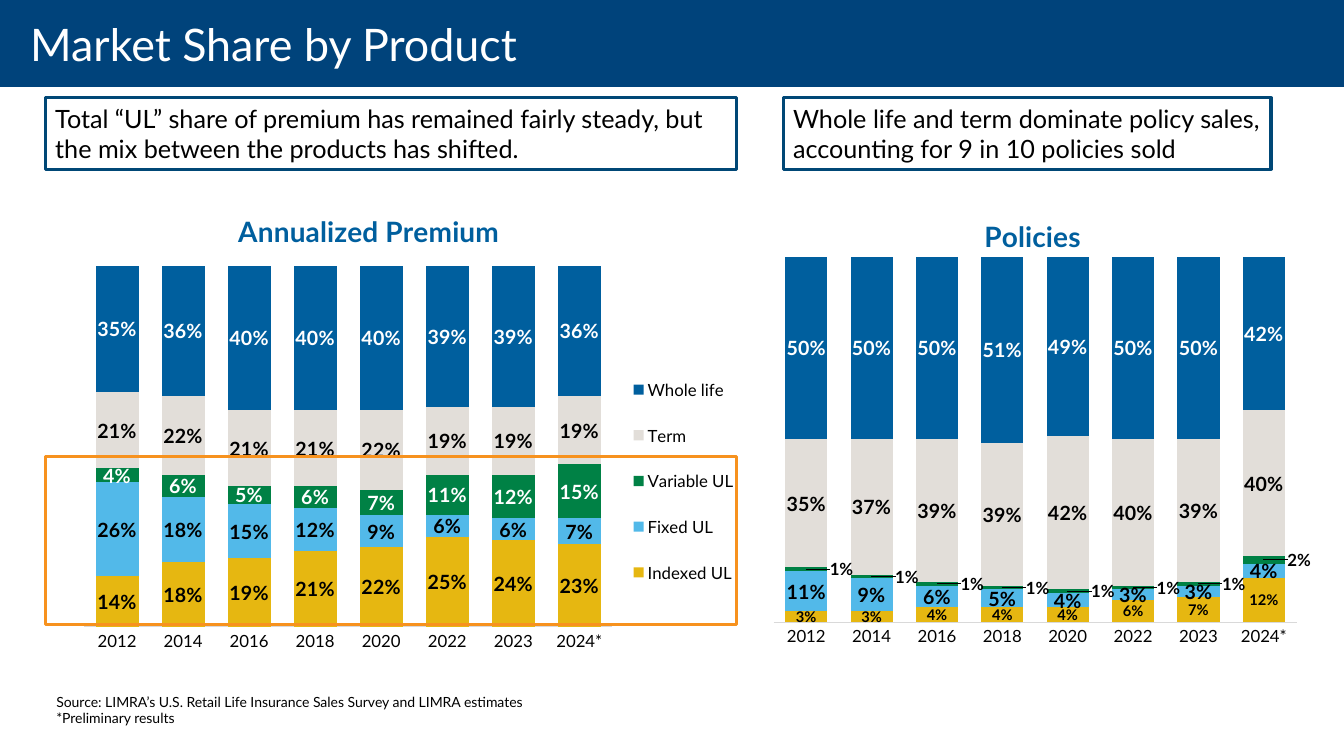
from dataclasses import dataclass
from typing import Optional

from lxml import etree
from pptx import Presentation
from pptx.chart.data import CategoryChartData
from pptx.dml.color import RGBColor
from pptx.enum.chart import XL_CHART_TYPE, XL_LABEL_POSITION, XL_LEGEND_POSITION, XL_TICK_MARK
from pptx.enum.shapes import MSO_SHAPE
from pptx.enum.text import MSO_ANCHOR, PP_ALIGN
from pptx.oxml.ns import qn
from pptx.util import Pt

STACKED = XL_CHART_TYPE.COLUMN_STACKED_100
CENTER = XL_LABEL_POSITION.CENTER
RIGHT = XL_LEGEND_POSITION.RIGHT
NO_TICK = XL_TICK_MARK.NONE
RECT = MSO_SHAPE.RECTANGLE
MIDDLE, BOTTOM = MSO_ANCHOR.MIDDLE, MSO_ANCHOR.BOTTOM
LEFT = PP_ALIGN.LEFT

BLACK = RGBColor(0x00, 0x00, 0x00)
WHITE = RGBColor(0xFF, 0xFF, 0xFF)
NAVY = RGBColor(0x00, 0x43, 0x7B)
FRAME = RGBColor(0x00, 0x47, 0x76)
BLUE = RGBColor(0x00, 0x5F, 0x9E)
ORANGE = RGBColor(0xF7, 0x92, 0x1E)
GOLD = RGBColor(0xE6, 0xB7, 0x11)
SKY = RGBColor(0x52, 0xB9, 0xE9)
GREEN = RGBColor(0x00, 0x81, 0x45)
STONE = RGBColor(0xE2, 0xDE, 0xD9)
GRAY = RGBColor(0xD9, 0xD9, 0xD9)

FONT = "Lato"
YEARS = ["2012", "2014", "2016", "2018", "2020", "2022", "2023", "2024*"]


@dataclass
class Box:
    x: float
    y: float
    w: float
    h: float

    def emu(self) -> tuple:
        return Pt(self.x), Pt(self.y), Pt(self.w), Pt(self.h)


@dataclass
class Product:
    name: str
    color: RGBColor
    percents: list
    label_color: RGBColor = BLACK
    label_size: float = 14
    label_shift: float = 0


@dataclass
class ShareChart:
    title: str
    box: Box
    plot: Box
    title_x: float
    title_y: float
    gap: int
    products: list
    legend: Optional[Box] = None


@dataclass
class Frame:
    box: Box
    color: RGBColor
    text: str = ""


CHARTS = [
    ShareChart("Annualized Premium", Box(50.4, 140.4, 483.84, 330.48),
               Box(0.02, 0.15, 0.78, 0.78), 0.24, 0.02, 53, [
        Product("Indexed UL", GOLD, [14, 18, 19, 21, 22, 25, 24, 23]),
        Product("Fixed UL", SKY, [26, 18, 15, 12, 9, 6, 6, 7]),
        Product("Variable UL", GREEN, [4, 6, 5, 6, 7, 11, 12, 15], WHITE),
        Product("Term", STONE, [21, 22, 21, 21, 22, 19, 19, 19]),
        Product("Whole life", BLUE, [35, 36, 40, 40, 40, 39, 39, 36], WHITE),
    ], Box(0.82, 0.34, 0.17, 0.55)),
    ShareChart("Policies", Box(540, 140.4, 419.76, 330.48),
               Box(0.03, 0.13, 0.89, 0.79), 0.38, 0.03, 55, [
        Product("Indexed UL", GOLD, [3, 3, 4, 4, 4, 6, 7, 12], label_size=10.5),
        Product("Fixed UL", SKY, [11, 9, 6, 5, 4, 3, 3, 4]),
        Product("Variable UL", GREEN, [1, 1, 1, 1, 1, 1, 1, 2], label_size=12, label_shift=0.06),
        Product("Term", STONE, [35, 37, 39, 39, 42, 40, 39, 40]),
        Product("Whole life", BLUE, [50, 50, 50, 51, 49, 50, 50, 42], WHITE),
    ]),
]

FRAMES = [
    Frame(Box(32.4, 326.2, 493.9, 120.2), ORANGE),
    Frame(Box(32.4, 69.8, 493.9, 51.1), FRAME,
          "Total “UL” share of premium has remained fairly steady, "
          "but the mix between the products has shifted."),
    Frame(Box(559.4, 69.8, 348.5, 51.1), FRAME,
          "Whole life and term dominate policy sales, accounting for 9 in 10 policies sold"),
]

SOURCE = ["Source: LIMRA’s U.S. Retail Life Insurance Sales Survey and LIMRA estimates",
          "*Preliminary results"]


def style_font(font, size: float, color: RGBColor, bold: bool = False) -> None:
    font.name = FONT
    font.size = Pt(size)
    font.bold = bold
    font.color.rgb = color


def write(tf, lines: list, size: float, color: RGBColor) -> None:
    for i, line in enumerate(lines):
        p = tf.add_paragraph() if i else tf.paragraphs[0]
        p.alignment = LEFT
        r = p.add_run()
        r.text = line
        style_font(r.font, size, color)


def manual_layout(**values) -> etree.Element:
    layout = etree.Element(qn("c:layout"))
    manual = etree.SubElement(layout, qn("c:manualLayout"))
    for tag, value in values.items():
        etree.SubElement(manual, qn(f"c:{tag}")).set("val", str(value))
    return layout


def place(parent, layout, after: str) -> None:
    for old in parent.findall(qn("c:layout")):
        parent.remove(old)
    previous = parent.find(qn(after))
    if previous is None:
        parent.insert(0, layout)
    else:
        previous.addnext(layout)


def style_series(series, product: Product) -> None:
    series.format.fill.solid()
    series.format.fill.fore_color.rgb = product.color
    labels = series.data_labels
    labels.show_value = True
    labels.number_format = "0%"
    labels.number_format_is_linked = False
    labels.position = CENTER
    style_font(labels.font, product.label_size, product.label_color, True)
    if product.label_shift:
        for i in range(len(YEARS)):
            label = series.points[i].data_label
            style_font(label.font, product.label_size, product.label_color, True)
            label.position = CENTER
        for dlbl in labels._element.findall(qn("c:dLbl")):
            place(dlbl, manual_layout(x=product.label_shift, y=0), "c:idx")


def add_share_chart(slide, spec: ShareChart) -> None:
    data = CategoryChartData(number_format="0%")
    data.categories = YEARS
    for product in spec.products:
        data.add_series(product.name, [v / 100 for v in product.percents])
    chart = slide.shapes.add_chart(STACKED, *spec.box.emu(), data).chart
    style_font(chart.font, 12, BLACK)

    chart.has_title = True
    r = chart.chart_title.text_frame.paragraphs[0].add_run()
    r.text = spec.title
    style_font(r.font, 20, BLUE, True)
    place(chart.chart_title._element,
          manual_layout(xMode="edge", yMode="edge", x=spec.title_x, y=spec.title_y), "c:tx")

    plot = chart.plots[0]
    plot.gap_width = spec.gap
    plot.overlap = 100
    plot.vary_by_categories = False
    for series, product in zip(plot.series, spec.products):
        style_series(series, product)
    area = spec.plot
    place(chart._chartSpace.chart.plotArea,
          manual_layout(layoutTarget="inner", xMode="edge", yMode="edge",
                        x=area.x, y=area.y, w=area.w, h=area.h), "c:none")

    axis = chart.category_axis
    axis.major_tick_mark = NO_TICK
    axis.minor_tick_mark = NO_TICK
    axis.format.line.color.rgb = GRAY
    axis.format.line.width = Pt(0.75)
    style_font(axis.tick_labels.font, 12, BLACK)
    chart.value_axis.has_major_gridlines = False
    chart.value_axis.maximum_scale = 1
    chart.value_axis.visible = False

    chart.has_legend = spec.legend is not None
    if spec.legend:
        chart.legend.position = RIGHT
        chart.legend.include_in_layout = False
        style_font(chart.legend.font, 12, BLACK)
        key = spec.legend
        place(chart.legend._element,
              manual_layout(xMode="edge", yMode="edge", x=key.x, y=key.y, w=key.w, h=key.h),
              "c:legendPos")


def add_frame(slide, frame: Frame) -> None:
    sp = slide.shapes.add_shape(RECT, *frame.box.emu())
    sp.shadow.inherit = False
    sp.fill.background()
    sp.line.color.rgb = frame.color
    sp.line.width = Pt(2.25)
    if frame.text:
        sp.text_frame.word_wrap = True
        write(sp.text_frame, [frame.text], 18, BLACK)


def add_text(slide, box: Box, lines: list, size: float, color: RGBColor, anchor, inset: float) -> None:
    tf = slide.shapes.add_textbox(*box.emu()).text_frame
    tf.word_wrap = True
    tf.vertical_anchor = anchor
    tf.margin_left = Pt(inset)
    write(tf, lines, size, color)


def main() -> None:
    prs = Presentation()
    prs.slide_width, prs.slide_height = Pt(960), Pt(540)
    s = prs.slides.add_slide(prs.slide_layouts[6])
    banner = s.shapes.add_shape(RECT, *Box(0, 0, 960, 62).emu())
    banner.shadow.inherit = False
    banner.fill.solid()
    banner.fill.fore_color.rgb = NAVY
    banner.line.fill.background()
    add_text(s, Box(0, -3.6, 960, 69.8), ["Market Share by Product"], 32, WHITE, MIDDLE, 21.6)
    add_text(s, Box(33.1, 491, 400, 31.7), SOURCE, 10, BLACK, BOTTOM, 7.2)
    for spec in CHARTS:
        add_share_chart(s, spec)
    for frame in FRAMES:
        add_frame(s, frame)
    prs.save("out.pptx")


if __name__ == "__main__":
    main()
